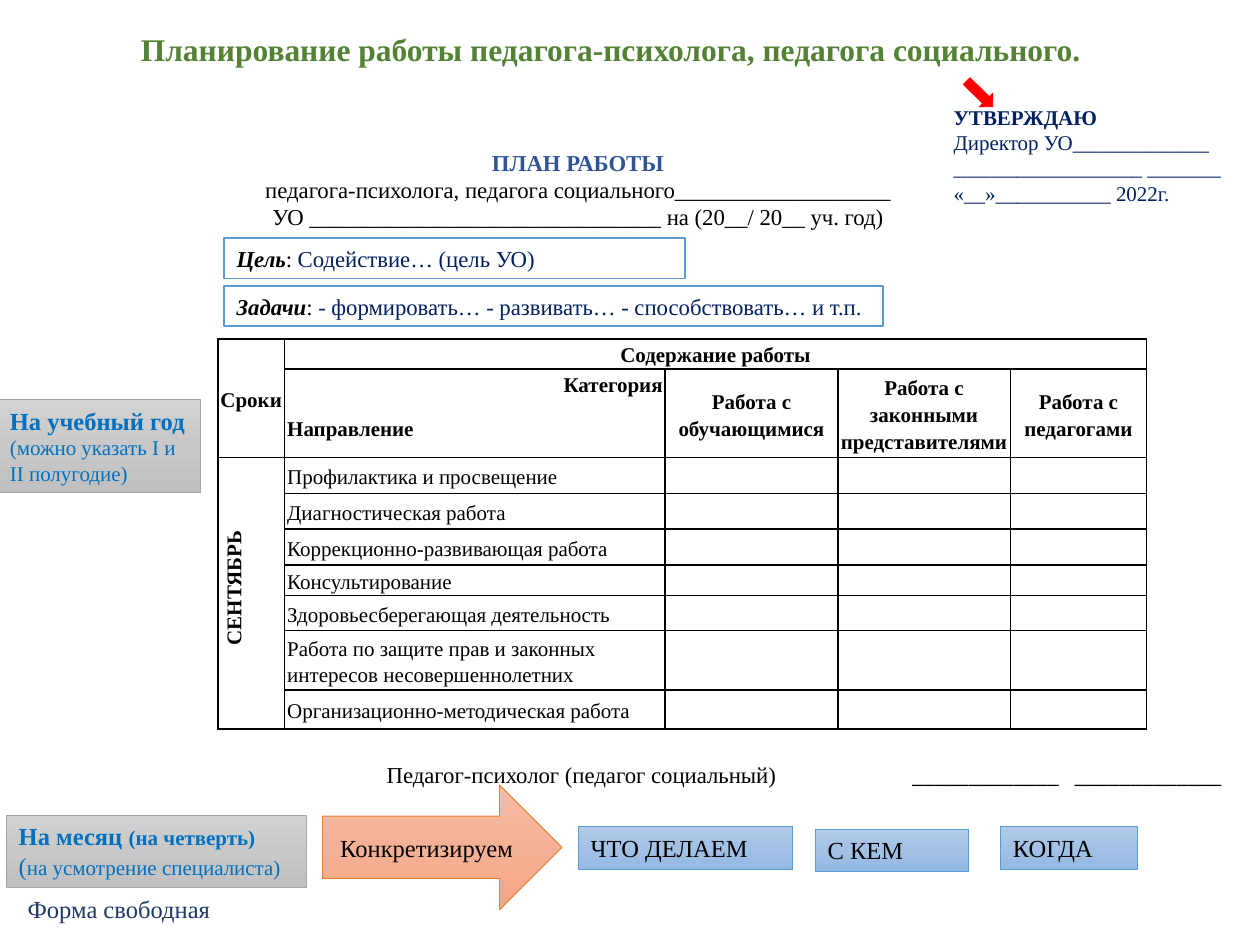
import copy
import pptx
import pptx.dml.color
import pptx.enum.shapes
import pptx.enum.text
import pptx.oxml
import pptx.oxml.ns
import pptx.util

Shape = pptx.enum.shapes.MSO_SHAPE
Align = pptx.enum.text.PP_ALIGN
Anchor = pptx.enum.text.MSO_ANCHOR
qn = pptx.oxml.ns.qn

BLACK, NAVY, BLUE = "000000", "002060", "0070C0"
GREY_FILL = ["D2D2D2", "C8C8C8", "C0C0C0"]
BLUE_FILL = ["B1CBE9", "A3C1E5", "93B9E4"]
ORANGE_FILL = ["F7BDA5", "F5B196", "F8A582"]


def rgb(value):
    return pptx.dml.color.RGBColor.from_string(value)


def assign(target, values):
    for name, value in values.items():
        setattr(target, name, value)


def run(text, size=12, color=BLACK, **font):
    return text, color, {"size": pptx.util.Pt(size), **font}


class PlanSlide:
    font_name = "Times New Roman"
    grid_columns, grid_rows = 100, 75

    def __init__(self, presentation):
        self.slide = presentation.slides.add_slide(presentation.slide_layouts[6])
        self.column = presentation.slide_width / self.grid_columns
        self.row = presentation.slide_height / self.grid_rows

    def place(self, left, top, width, height):
        return [round(length) for length in (left * self.column, top * self.row,
                                             width * self.column, height * self.row)]

    def fill_text(self, frame, paragraphs, **layout):
        for index, runs in enumerate(paragraphs):
            paragraph = frame.add_paragraph() if index else frame.paragraphs[0]
            assign(paragraph, {"alignment": Align.LEFT, **layout})
            for text, color, values in runs:
                piece = paragraph.add_run()
                piece.text = text
                assign(piece.font, {"name": self.font_name, **values})
                piece.font.color.rgb = rgb(color)

    def text(self, box, paragraphs, tabs=(), **layout):
        shape = self.slide.shapes.add_textbox(*self.place(*box))
        shape.text_frame.word_wrap = True
        if tabs:
            properties = shape.text_frame.paragraphs[0]._p.get_or_add_pPr()
            tab_list = properties.makeelement(qn("a:tabLst"), {})
            properties.append(tab_list)
            for tab in tabs:
                position = str(round(tab * self.column))
                tab_list.append(tab_list.makeelement(qn("a:tab"), {"pos": position, "algn": "l"}))
        self.fill_text(shape.text_frame, paragraphs, **layout)

    def paint(self, shape, colors):
        if len(colors) == 1:
            shape.fill.solid()
            shape.fill.fore_color.rgb = rgb(colors[0])
            return
        shape.fill.gradient()
        shape.fill.gradient_angle = 270
        stops = shape._element.spPr.find(qn("a:gradFill")).find(qn("a:gsLst"))
        stops.insert(1, copy.deepcopy(stops[0]))
        for index, (stop, color) in enumerate(zip(shape.fill.gradient_stops, colors)):
            stop.position = index / (len(colors) - 1)
            stop.color.rgb = rgb(color)

    def shape(self, box, colors, line, paragraphs=(), kind=Shape.RECTANGLE,
              line_width=0.5, rotation=0, anchor=Anchor.TOP, **layout):
        shape = self.slide.shapes.add_shape(kind, *self.place(*box))
        shape.shadow.inherit = False
        shape.rotation = rotation
        self.paint(shape, colors)
        shape.line.color.rgb = rgb(line)
        shape.line.width = pptx.util.Pt(line_width)
        assign(shape.text_frame, {"word_wrap": True, "vertical_anchor": anchor})
        self.fill_text(shape.text_frame, paragraphs, **layout)

    def table(self, corner, widths, heights):
        box = self.place(*corner, sum(widths), sum(heights))
        table = self.slide.shapes.add_table(len(heights), len(widths), *box).table
        assign(table, {"first_row": False, "horz_banding": False})
        for column, width in zip(table.columns, widths):
            column.width = round(width * self.column)
        for row, height in zip(table.rows, heights):
            row.height = round(height * self.row)
        inset = round(0.2 * self.column)
        for cell in table.iter_cells():
            assign(cell, {"margin_left": inset, "margin_right": inset,
                          "margin_top": inset // 2, "margin_bottom": 0,
                          "vertical_anchor": Anchor.MIDDLE})
            for side in "LRTB":
                cell._tc.get_or_add_tcPr().append(pptx.oxml.parse_xml(
                    f'<a:ln{side} {pptx.oxml.ns.nsdecls("a")} w="12700"><a:solidFill>'
                    f'<a:srgbClr val="{BLACK}"/></a:solidFill></a:ln{side}>'))
            cell.fill.solid()
            cell.fill.fore_color.rgb = rgb("FFFFFF")
            cell.text_frame.paragraphs[0]._p.get_or_add_endParaRPr().set("sz", "1200")
        return table

    def cell(self, cell, *lines, bold=True, after=10, alignment=Align.CENTER):
        self.fill_text(cell.text_frame, [[run(line, bold=bold)] for line in lines],
                       alignment=alignment, line_spacing=1.15, space_after=pptx.util.Pt(after))


def add_plan_table(plan):
    activities = [
        "Профилактика и просвещение", "Диагностическая работа",
        "Коррекционно-развивающая работа", "Консультирование",
        "Здоровьесберегающая деятельность",
        "Работа по защите прав и законных интересов несовершеннолетних",
        "Организационно-методическая работа",
    ]
    audiences = ["Работа с обучающимися", "Работа с законными представителями",
                 "Работа с педагогами"]
    table = plan.table((17.3, 26.9), [5.3, 30.2, 13.7, 13.7, 10.8],
                       [2.4, 7, 2.85, 2.85, 2.85, 2.4, 2.8, 4.7, 3.1])
    for first, last in [((0, 0), (1, 0)), ((0, 1), (0, 4)), ((2, 0), (8, 0))]:
        table.cell(*first).merge(table.cell(*last))
    plan.cell(table.cell(0, 0), "Сроки", alignment=Align.LEFT)
    plan.cell(table.cell(0, 1), "Содержание работы")
    table.cell(0, 1).vertical_anchor = Anchor.TOP
    corner = table.cell(1, 1)
    corner.vertical_anchor = Anchor.TOP
    plan.cell(corner, "Категория", "Направление", alignment=Align.LEFT)
    corner.text_frame.paragraphs[0].alignment = Align.RIGHT
    for index, audience in enumerate(audiences, 2):
        plan.cell(table.cell(1, index), audience)
    month = table.cell(2, 0)
    month._tc.get_or_add_tcPr().set("vert", "vert270")
    plan.cell(month, "СЕНТЯБРЬ")
    month.text_frame.paragraphs[0]._p.get_or_add_pPr().set("marL", str(round(0.8 * plan.column)))
    for index, activity in enumerate(activities, 2):
        plan.cell(table.cell(index, 1), activity, bold=False, after=0, alignment=Align.LEFT)


def main():
    presentation = pptx.Presentation()
    assign(presentation, {"slide_width": pptx.util.Inches(10),
                          "slide_height": pptx.util.Inches(7.5)})
    plan = PlanSlide(presentation)
    plan.text((10.2, 1.9, 82.4, 4), [[run(
        "Планирование работы педагога-психолога, педагога социального.",
        18, "548235", bold=True)]])
    add_plan_table(plan)

    for top, width, label, content in [
            (18.9, 36.6, "Цель", "Содействие… (цель УО)"),
            (22.7, 52.3, "Задачи", "- формировать… - развивать… - способствовать… и т.п.")]:
        plan.shape((17.8, top, width, 3.2), ["FFFFFF"], "5B9BD5",
                   [[run(label, 13, bold=True, italic=True), run(": ", 13),
                     run(content, 13, NAVY)]], line_width=1)

    plan.shape((-0.2, 31.7, 16.1, 7.4), GREY_FILL, "A5A5A5",
               [[run("На учебный год ", 14, BLUE, bold=True),
                 run("(можно указать I и II полугодие)", 12, BLUE)]])
    plan.shape((0.5, 64.7, 23.8, 5.7), GREY_FILL, "A5A5A5",
               [[run("На месяц ", 14, BLUE, bold=True),
                 run("(на четверть)", 12, BLUE, bold=True)],
                [run("(", 14, BLUE), run("на усмотрение специалиста)", 12, BLUE)]])
    for left, top, width, question in [(45.9, 65.6, 17, "ЧТО ДЕЛАЕМ"),
                                       (79.4, 65.6, 10.9, "КОГДА"),
                                       (64.7, 65.8, 12.2, "С КЕМ")]:
        plan.shape((left, top, width, 3.4), BLUE_FILL, "5B9BD5", [[run(question, 14)]])
    plan.shape((25.6, 62.3, 19, 9.9), ORANGE_FILL, "ED7D31", [[run("Конкретизируем", 14)]],
               kind=Shape.RIGHT_ARROW, anchor=Anchor.MIDDLE, alignment=Align.CENTER)

    plan.text((74.7, 7.8, 23.8, 9.1),
              [[run("УТВЕРЖДАЮ", 12, NAVY, bold=True)],
               [run("Директор УО_____________", 12, NAVY)],
               [run("__________________ _______", 12, NAVY)],
               [run("«__»___________ 2022г.", 12, NAVY)]])
    plan.text((29.7, 59.9, 68.8, 3.2),
              [[run("Педагог-психолог (педагог социальный)", 13),
                run("\t_____________\t_____________", 13, name="Calibri")]], tabs=(41.7, 54.6))
    plan.text((12.3, 11.3, 67.1, 7.6),
              [[run("ПЛАН РАБОТЫ", 13, "2F5597", bold=True)],
               [run("педагога-психолога, педагога социального___________________", 13)],
               [run("УО _______________________________ на (20__/ 20__ уч. год)", 13)]],
              alignment=Align.CENTER)
    plan.text((1.2, 70.5, 17.9, 3.4), [[run("Форма свободная", 14, "203864")]])
    plan.shape((76.3, 6.7, 2.9, 1.5), ["FF0000"], "FF0000",
               kind=Shape.RIGHT_ARROW, rotation=44.4)
    presentation.save("out.pptx")


if __name__ == "__main__":
    main()
